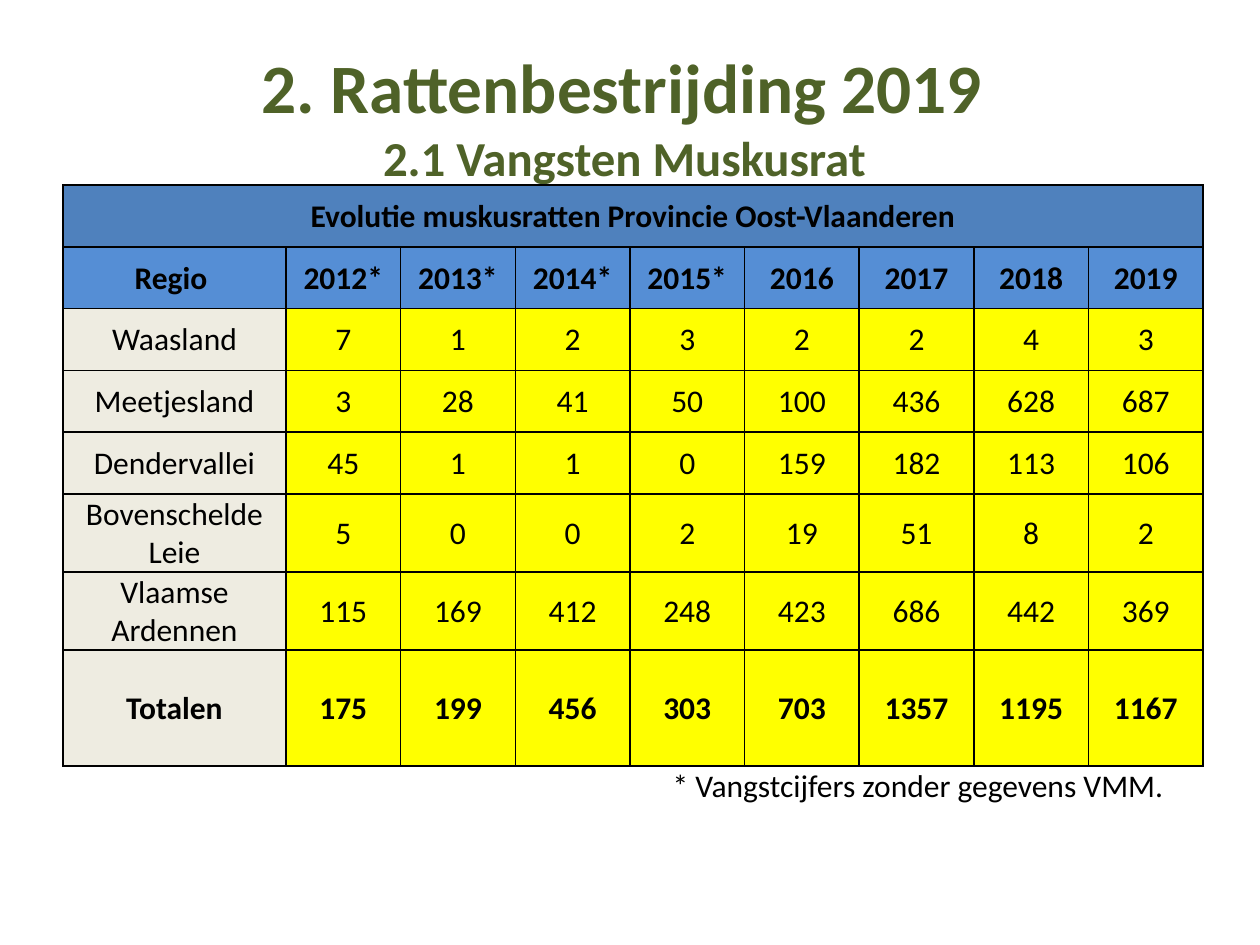
from copy import deepcopy
from dataclasses import dataclass

from lxml import etree
from pptx import Presentation
from pptx.dml.color import RGBColor
from pptx.enum.text import MSO_ANCHOR, MSO_AUTO_SIZE, PP_ALIGN
from pptx.oxml.ns import qn
from pptx.util import Inches, Pt

CENTER = PP_ALIGN.CENTER
MIDDLE = MSO_ANCHOR.MIDDLE
NO_AUTOFIT = MSO_AUTO_SIZE.NONE
FIT_SHAPE = MSO_AUTO_SIZE.SHAPE_TO_FIT_TEXT


@dataclass(frozen=True)
class Theme:
    font: str = "Calibri"
    title: str = "4F6228"
    text: str = "000000"
    border: str = "000000"
    banner: str = "4F81BD"
    header: str = "558ED5"
    region: str = "EEECE1"
    value: str = "FFFF00"
    title_size: float = 39.6
    subtitle_size: float = 27.9
    body_size: float = 18
    border_width: float = 1


@dataclass(frozen=True)
class TableRow:
    label: str
    values: list
    height: float
    bold: bool = False
    label_fill: str = Theme.region
    value_fill: str = Theme.value


THEME = Theme()
LABEL_WIDTH = 1.77
YEAR_WIDTH = 0.91
BANNER_HEIGHT = 0.49
YEARS = ["2012*", "2013*", "2014*", "2015*", "2016", "2017", "2018", "2019"]
REGIONS = [
    TableRow("Waasland", [7, 1, 2, 3, 2, 2, 4, 3], 0.49),
    TableRow("Meetjesland", [3, 28, 41, 50, 100, 436, 628, 687], 0.49),
    TableRow("Dendervallei", [45, 1, 1, 0, 159, 182, 113, 106], 0.49),
    TableRow("Bovenschelde Leie", [5, 0, 0, 2, 19, 51, 8, 2], 0.62),
    TableRow("Vlaamse Ardennen", [115, 169, 412, 248, 423, 686, 442, 369], 0.62),
]
TOTALS = [sum(column) for column in zip(*(region.values for region in REGIONS))]
ROWS = [
    TableRow("Regio ", YEARS, 0.49, True, THEME.header, THEME.header),
    *REGIONS,
    TableRow("Totalen", TOTALS, 0.92, True),
]


def format_run(run, size: float, color: str, bold: bool = False) -> None:
    run.font.name = THEME.font
    run.font.size = Pt(size)
    run.font.bold = bold
    run.font.color.rgb = RGBColor.from_string(color)


def add_borders(cell) -> None:
    properties = cell._tc.get_or_add_tcPr()
    for position, side in enumerate(("a:lnL", "a:lnR", "a:lnT", "a:lnB")):
        line = etree.Element(qn(side), w=str(Pt(THEME.border_width)))
        fill = etree.SubElement(line, qn("a:solidFill"))
        etree.SubElement(fill, qn("a:srgbClr"), val=THEME.border)
        properties.insert(position, line)


def fill_cell(cell, text: str, fill: str, bold: bool) -> None:
    cell.text_frame.text = text
    cell.vertical_anchor = MIDDLE
    cell.margin_left = cell.margin_right = cell.margin_top = Inches(0.01)
    cell.margin_bottom = 0
    cell.fill.solid()
    cell.fill.fore_color.rgb = RGBColor.from_string(fill)
    paragraph = cell.text_frame.paragraphs[0]
    paragraph.alignment = CENTER
    for run in paragraph.runs:
        format_run(run, THEME.body_size, THEME.text, bold)


def set_title(title) -> None:
    title.left, title.top = Inches(0.5), Inches(0.29)
    title.width, title.height = Inches(9), Inches(1.25)
    text_frame = title.text_frame
    text_frame.text = "2. Rattenbestrijding 2019 \v2.1 Vangsten Muskusrat "
    text_frame.auto_size = NO_AUTOFIT
    text_frame.vertical_anchor = MIDDLE
    paragraph = text_frame.paragraphs[0]
    paragraph.alignment = CENTER
    heading, subheading = paragraph.runs
    format_run(heading, THEME.title_size, THEME.title, True)
    format_run(subheading, THEME.subtitle_size, THEME.title, True)
    line_break = paragraph._p.find(qn("a:br"))
    line_break.append(deepcopy(heading._r.rPr))


def add_footnote(slide) -> None:
    shape = slide.shapes.add_textbox(Inches(5.24), Inches(6.03), Inches(4.2), Inches(0.4))
    text_frame = shape.text_frame
    text_frame.text = "* Vangstcijfers zonder gegevens VMM."
    text_frame.word_wrap = False
    text_frame.auto_size = FIT_SHAPE
    format_run(text_frame.paragraphs[0].runs[0], THEME.body_size, THEME.text)


def add_catch_table(slide) -> None:
    heights = [BANNER_HEIGHT, *(row.height for row in ROWS)]
    widths = [LABEL_WIDTH, *(YEAR_WIDTH for year in YEARS)]
    table = slide.shapes.add_table(
        len(heights), len(widths), Inches(0.5), Inches(1.47),
        Inches(sum(widths)), Inches(sum(heights)),
    ).table
    table.first_row = table.horz_banding = False
    for table_row, height in zip(table.rows, heights):
        table_row.height = Inches(height)
    for column, width in zip(table.columns, widths):
        column.width = Inches(width)

    banner = table.cell(0, 0)
    banner.merge(table.cell(0, len(YEARS)))
    fill_cell(banner, "Evolutie muskusratten Provincie Oost-Vlaanderen", THEME.banner, True)
    for row_index, row in enumerate(ROWS, start=1):
        fill_cell(table.cell(row_index, 0), row.label, row.label_fill, row.bold)
        for column_index, value in enumerate(row.values, start=1):
            fill_cell(table.cell(row_index, column_index), str(value), row.value_fill, row.bold)
    for cell in table.iter_cells():
        add_borders(cell)


def main() -> None:
    presentation = Presentation()
    presentation.slide_width = Inches(10)
    presentation.slide_height = Inches(7.5)
    slide = presentation.slides.add_slide(presentation.slide_layouts.get_by_name("Title Only"))
    set_title(slide.shapes.title)
    add_footnote(slide)
    add_catch_table(slide)
    presentation.save("out.pptx")


if __name__ == "__main__":
    main()
